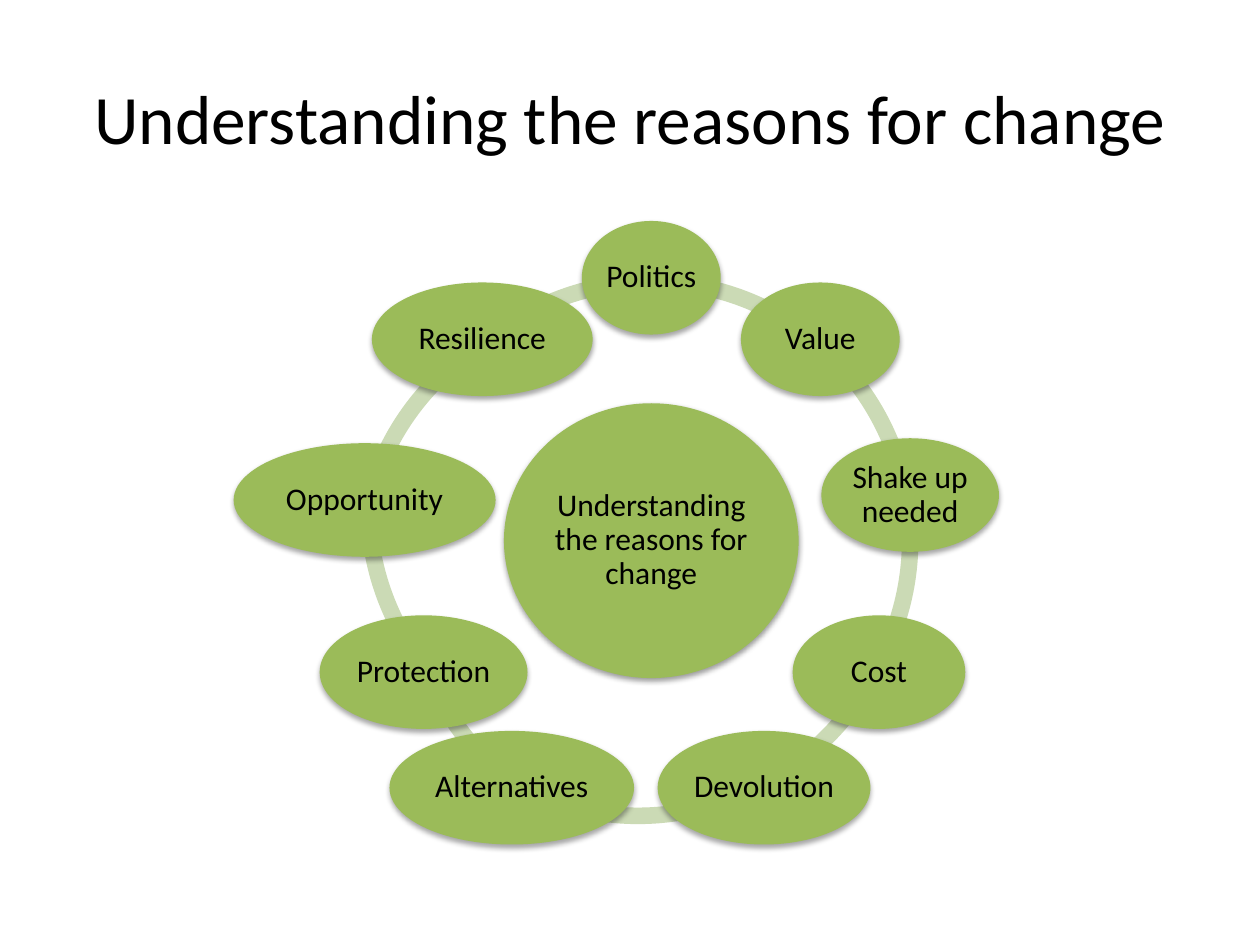
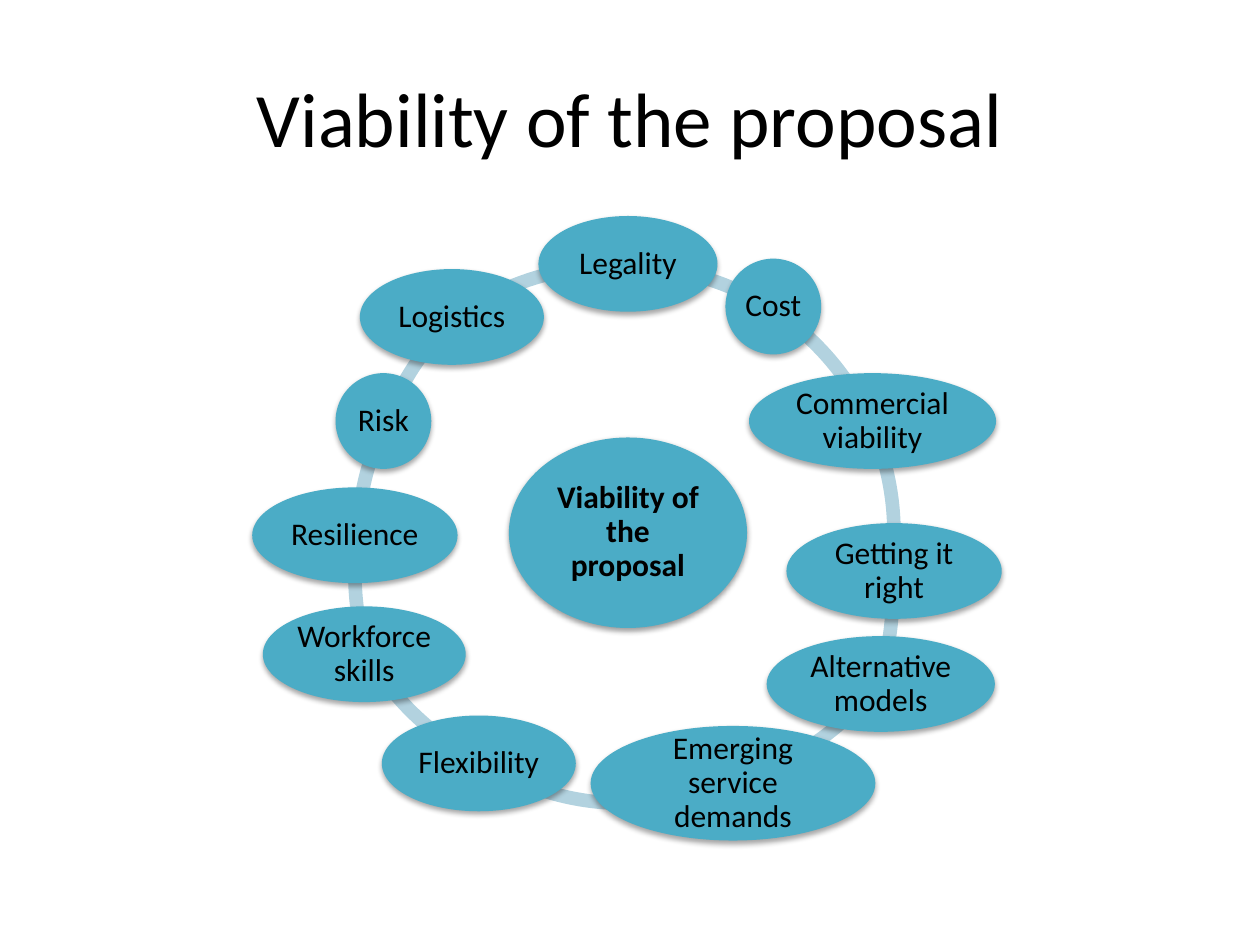
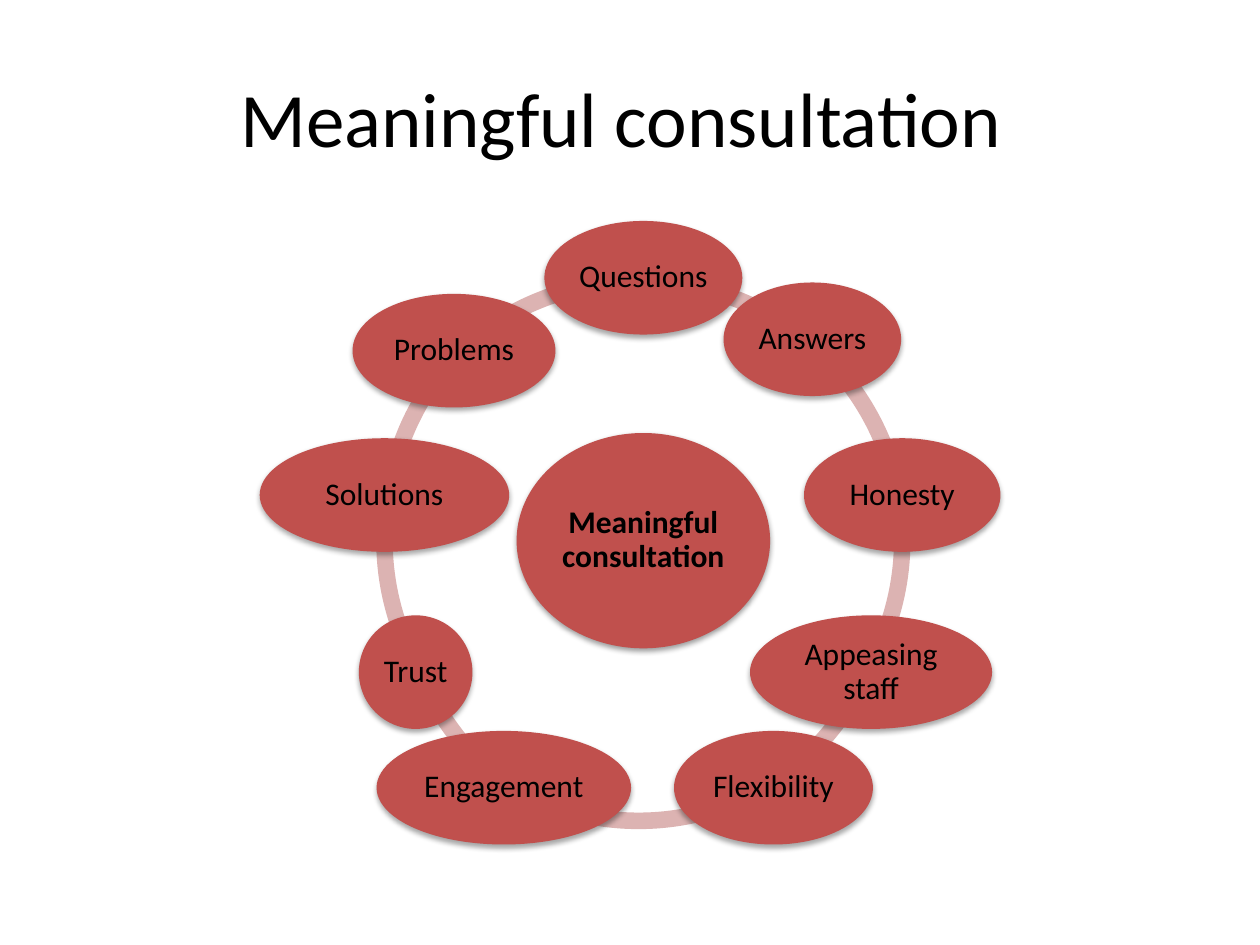
"""Build three slides that each show a ring of factors around a central idea."""
import math

import lxml.etree
import pptx
import pptx.dml.color
import pptx.enum.shapes
import pptx.enum.text
import pptx.oxml.ns
import pptx.util

Cm = pptx.util.Cm
Pt = pptx.util.Pt
SHAPE = pptx.enum.shapes.MSO_SHAPE
FONT = "Calibri"
BLACK = "000000"

DIAGRAMS = [
    {
        "title": "Understanding the reasons for change", "title_size": 39.6,
        "hub": "Understanding the reasons for change", "hub_size": (5.94, 5.54), "bold": False,
        "fill": "9BBB59", "arc_fill": "CBDAB5",
        "center": (13.13, 10.9), "radius": 5.3, "node_height": 2.29,
        "arc_size": 10.77, "thickness": 0.031,
        "nodes": [
            ("Politics", 2.8, 0, 0), ("Value", 3.2, 0, 0), ("Shake up needed", 3.58, 0, 0),
            ("Cost", 3.48, 0, 0), ("Devolution", 4.29, 0.46, 0), ("Alternatives", 4.93, -1, 0),
            ("Protection", 4.19, 0, 0), ("Opportunity", 5.28, -0.56, 0.1), ("Resilience", 4.45, 0, 0),
        ],
    },
    {
        "title": "Viability of the proposal", "title_size": 44,
        "hub": "Viability of the proposal", "hub_size": (4.8, 3.84), "bold": True,
        "fill": "4BACC6", "arc_fill": "B2D2DF",
        "center": (12.66, 10.74), "radius": 5.42, "node_height": 1.93,
        "arc_size": 11, "thickness": 0.025,
        "nodes": [
            ("Legality", 3.61, 0, 0), ("Cost", 1.93, 0, 0), ("Commercial viability", 4.98, 0, 0),
            ("Getting it right", 4.34, 0, 0), ("Alternative models", 4.6, 1, -0.5),
            ("Emerging service demands", 5.74, 0.59, -0.15, 2.31), ("Flexibility", 3.91, -1.48, -0.55),
            ("Workforce skills", 4.09, -1.22, -1.1), ("Resilience", 4.14, -0.14, -0.72),
            ("Risk", 1.93, 0, 0), ("Logistics", 3.71, -0.62, 0.21),
        ],
    },
    {
        "title": "Meaningful consultation ", "title_size": 44,
        "hub": "Meaningful consultation", "hub_size": (5.11, 4.34), "bold": True,
        "fill": "C0504D", "arc_fill": "DCB3B2",
        "center": (12.97, 10.9), "radius": 5.3, "node_height": 2.29,
        "arc_size": 10.77, "thickness": 0.031,
        "nodes": [
            ("Questions", 3.99, 0, 0), ("Answers", 3.58, 0, 0), ("Honesty", 3.96, 0, 0),
            ("Appeasing staff", 4.88, 0, 0), ("Flexibility", 4.01, 0.81, 0), ("Engagement", 5.13, -1, 0),
            ("Trust", 2.29, 0, 0), ("Solutions", 5.03, 0, 0), ("Problems", 4.09, -0.41, 0.23),
        ],
    },
]


def rgb(value):
    """Return the colour for a hex string."""
    return pptx.dml.color.RGBColor.from_string(value)


def add_text(tf, text, size, bold=False):
    """Write one centred run into a text frame."""
    tf.word_wrap = True
    tf.auto_size = pptx.enum.text.MSO_AUTO_SIZE.NONE
    tf.vertical_anchor = pptx.enum.text.MSO_ANCHOR.MIDDLE
    p = tf.paragraphs[0]
    p.alignment = pptx.enum.text.PP_ALIGN.CENTER
    r = p.add_run()
    r.text = text
    r.font.name = FONT
    r.font.size = Pt(size)
    r.font.bold = bold
    r.font.color.rgb = rgb(BLACK)
    return p


def add_title(s, text, size):
    """Place and fill the title placeholder."""
    sp = s.shapes.title
    sp.left, sp.top, sp.width, sp.height = Cm(1.27), Cm(0.76), Cm(22.86), Cm(3.18)
    add_text(sp.text_frame, text, size)


def add_centered(s, kind, x, y, width, height, fill):
    """Add a plain filled shape centred on a point."""
    sp = s.shapes.add_shape(kind, Cm(x - width / 2), Cm(y - height / 2), Cm(width), Cm(height))
    sp.shadow.inherit = False
    sp.fill.solid()
    sp.fill.fore_color.rgb = rgb(fill)
    sp.line.fill.background()
    return sp


def add_shadow(sp, alpha, distance):
    """Give a shape a soft black shadow that falls straight down."""
    qn = pptx.oxml.ns.qn
    effects = sp._element.spPr.find(qn("a:effectLst"))
    shadow = lxml.etree.SubElement(
        effects, qn("a:outerShdw"), blurRad=str(Pt(3.1)), dist=str(Pt(distance)),
        dir="5400000", rotWithShape="0")
    color = lxml.etree.SubElement(shadow, qn("a:srgbClr"), val=BLACK)
    lxml.etree.SubElement(color, qn("a:alpha"), val=str(alpha * 1000))


def add_arc(s, start, end, d):
    """Join two points clockwise with a band of a circle of the ring's radius."""
    (x1, y1), (x2, y2) = start, end
    chord = math.dist(start, end)
    rise = math.sqrt(d["radius"] ** 2 - chord ** 2 / 4) / chord
    x = (x1 + x2) / 2 - (y2 - y1) * rise
    y = (y1 + y2) / 2 + (x2 - x1) * rise
    sp = add_centered(s, SHAPE.BLOCK_ARC, x, y, d["arc_size"], d["arc_size"], d["arc_fill"])
    for i, (px, py) in enumerate((start, end)):
        sp.adjustments[i] = math.degrees(math.atan2(py - y, px - x)) % 360 * 0.6
    sp.adjustments[2] = d["thickness"]


def add_bubble(s, text, x, y, width, height, fill, bold=False, alpha=35, distance=1.8):
    """Add a shadowed ellipse with a label."""
    sp = add_centered(s, SHAPE.OVAL, x, y, width, height, fill)
    add_shadow(sp, alpha, distance)
    tf = sp.text_frame
    tf.margin_left = tf.margin_right = tf.margin_top = tf.margin_bottom = Cm(0.07)
    add_text(tf, text, 18, bold).line_spacing = 0.9


def node_centers(d):
    """Return the evenly turned centres of the nodes, each with its own shift."""
    cx, cy = d["center"]
    step = math.tau / len(d["nodes"])
    return [(cx + d["radius"] * math.sin(i * step) + node[2],
             cy - d["radius"] * math.cos(i * step) + node[3])
            for i, node in enumerate(d["nodes"])]


def add_ring(s, d):
    """Draw the arcs, the hub and the bubbles of a diagram."""
    centers = node_centers(d)
    for start, end in reversed(list(zip(centers, centers[1:] + centers[:1]))):
        add_arc(s, start, end, d)
    add_bubble(s, d["hub"], *d["center"], *d["hub_size"], d["fill"], d["bold"], 38, 1.6)
    for (text, width, _, _, *height), (x, y) in zip(d["nodes"], centers):
        add_bubble(s, text, x, y, width, height[0] if height else d["node_height"], d["fill"])


def main():
    """Build and save the presentation."""
    prs = pptx.Presentation()
    prs.slide_width, prs.slide_height = Cm(25.4), Cm(19.05)
    for d in DIAGRAMS:
        s = prs.slides.add_slide(prs.slide_layouts[5])
        add_title(s, d["title"], d["title_size"])
        add_ring(s, d)
    prs.save("out.pptx")


if __name__ == "__main__":
    main()
